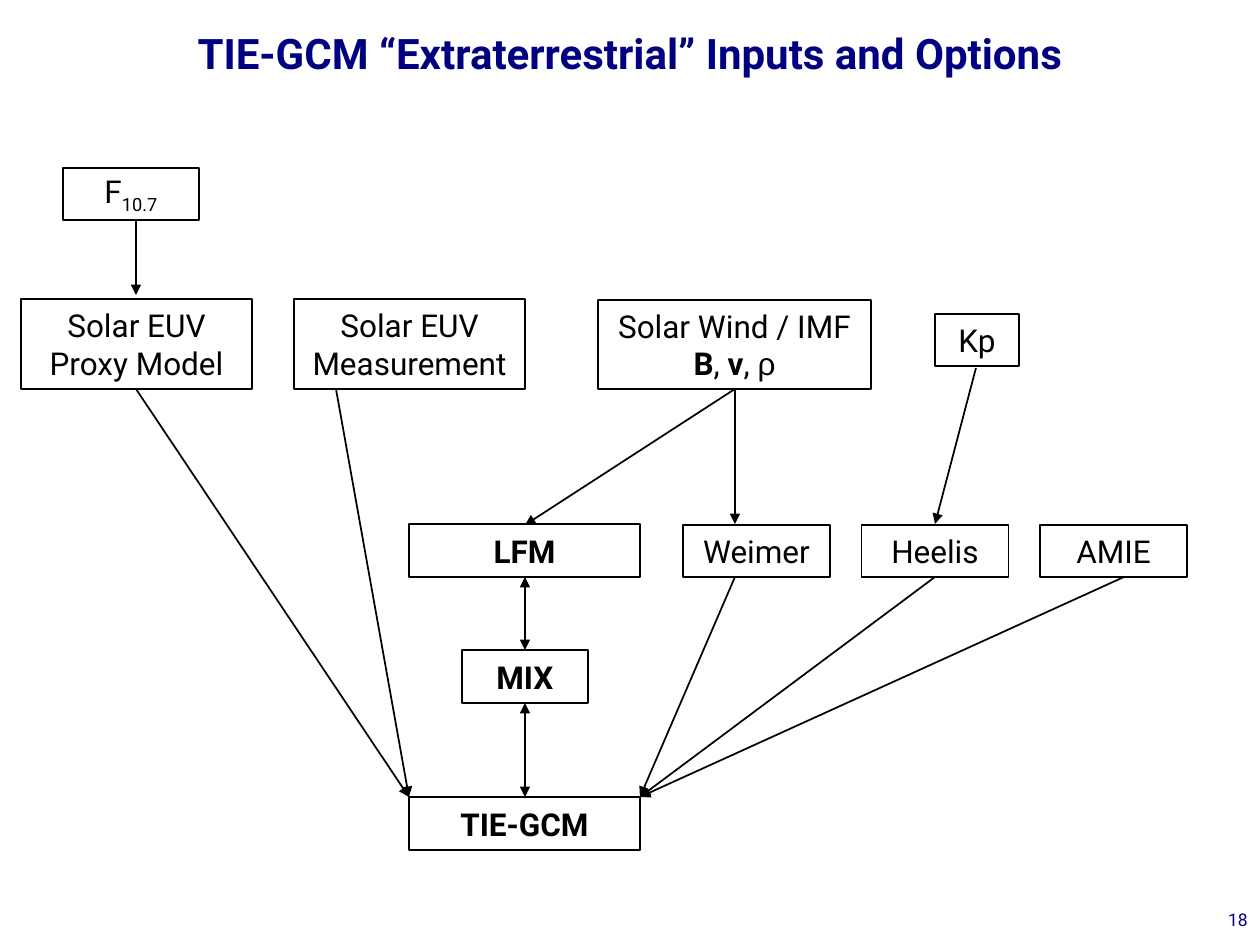
from lxml.etree import SubElement
from pptx import Presentation
from pptx.dml.color import RGBColor
from pptx.enum.shapes import MSO_CONNECTOR, MSO_SHAPE
from pptx.enum.text import MSO_ANCHOR as Anchor, MSO_AUTO_SIZE as AutoSize, PP_ALIGN as Align
from pptx.oxml.ns import qn
from pptx.util import Pt

EMU_PER_PX = 7257.14
FONT = "Roboto"
COLORS = {"ink": "000000", "navy": "000080"}

ROW_STEP, ROW_LEFT, ROW_TOP = 178.5, 683, 525

# Runs are (text, style) pairs; style is "", "bold", "sub" or "greek".
THIN_BOXES = [
    ((598, 300, 273, 89), [("Solar Wind / IMF ", ""), ("B", "bold"), (", ", ""),
                           ("v", "bold"), (", ", ""), ("ρ", "greek")]),
    ((935, 314, 84, 52), [("Kp", "")]),
    ((63, 168, 136, 52), [("F", ""), ("10.7", "sub")]),
    ((21, 299, 231, 90), [("Solar EUV Proxy Model", "")]),
    ((294, 299, 231, 90), [("Solar EUV Measurement", "")]),
]
MODEL_BOXES = [
    ((409, 524, 231, 53), "LFM"),
    ((462, 650, 126, 53), "MIX"),
    ((409, 797, 231, 53), "TIE-GCM"),
]
POTENTIAL_MODELS = ["Weimer", "Heelis", "AMIE"]

MODEL_LEFT, MODEL_RIGHT = (409, 797), (640, 797)
ARROWS = [
    ((136, 220), (136, 295)),
    ((136, 389), MODEL_LEFT),
    ((336, 389), MODEL_LEFT),
    ((735, 389), (525, 525)),
    ((735, 389), (735, 524)),
    ((976, 368), (935, 524)),
    ((735, 577), MODEL_RIGHT),
    ((935, 577), MODEL_RIGHT),
    ((1124, 577), MODEL_RIGHT),
]
TWO_WAY_ARROWS = [((525, 577), (525, 650)), ((525, 703), (525, 797))]


def px(*lengths):
    return [round(length * EMU_PER_PX) for length in lengths]


def color(name):
    return RGBColor.from_string(COLORS[name])


def format_run(run, size, color_name, bold=False, font=FONT):
    run.font.name = font
    run.font.size = Pt(size)
    run.font.bold = bold
    run.font.color.rgb = color(color_name)


def add_box(slide, place, runs, line_width=1):
    box = slide.shapes.add_shape(MSO_SHAPE.RECTANGLE, *px(*place))
    box.shadow.inherit = False
    box.fill.background()
    box.line.color.rgb = color("ink")
    box.line.width = Pt(line_width)
    frame = box.text_frame
    frame.word_wrap = True
    frame.vertical_anchor = Anchor.MIDDLE
    para = frame.paragraphs[0]
    para.alignment = Align.CENTER
    for text, style in runs:
        span = para.add_run()
        span.text = text
        format_run(span, 18, "ink", style == "bold", "Arial" if style == "greek" else FONT)
        if style == "sub":
            span.font._element.set("baseline", "-25000")


def add_arrow(slide, start, end, two_way=False):
    arrow = slide.shapes.add_connector(MSO_CONNECTOR.STRAIGHT, *px(*start, *end))
    arrow.line.color.rgb = color("ink")
    arrow.line.width = Pt(1)
    line = arrow.line._get_or_add_ln()
    for tag in ["a:headEnd", "a:tailEnd"] if two_way else ["a:tailEnd"]:
        SubElement(line, qn(tag), type="triangle")
    SubElement(arrow._element.spPr, qn("a:effectLst"))


def set_title(slide, text):
    title = slide.shapes.title
    title.left, title.top, title.width, title.height = px(0, 21, 1260, 63)
    frame = title.text_frame
    frame.text = text
    frame.auto_size = AutoSize.NONE
    frame.vertical_anchor = Anchor.MIDDLE
    frame.paragraphs[0].alignment = Align.CENTER
    format_run(frame.paragraphs[0].runs[0], 24, "navy", bold=True)


def add_page_number(slide, text):
    frame = slide.shapes.add_textbox(*px(998, 903, 262, 42)).text_frame
    frame.word_wrap = True
    frame.text = text
    frame.paragraphs[0].alignment = Align.RIGHT
    format_run(frame.paragraphs[0].runs[0], 10, "navy")


def main():
    deck = Presentation()
    deck.slide_width, deck.slide_height = px(1260, 945)
    slide = deck.slides.add_slide(deck.slide_layouts[5])
    set_title(slide, "TIE-GCM “Extraterrestrial” Inputs and Options")
    for place, runs in THIN_BOXES:
        add_box(slide, place, runs)
    for column, name in enumerate(POTENTIAL_MODELS):
        add_box(slide, (ROW_LEFT + column * ROW_STEP, ROW_TOP, 147, 52), [(name, "")])
    for place, name in MODEL_BOXES:
        add_box(slide, place, [(name, "bold")], line_width=1.5)
    for start, end in ARROWS:
        add_arrow(slide, start, end)
    for start, end in TWO_WAY_ARROWS:
        add_arrow(slide, start, end, two_way=True)
    add_page_number(slide, "18")
    deck.save("out.pptx")


if __name__ == "__main__":
    main()
